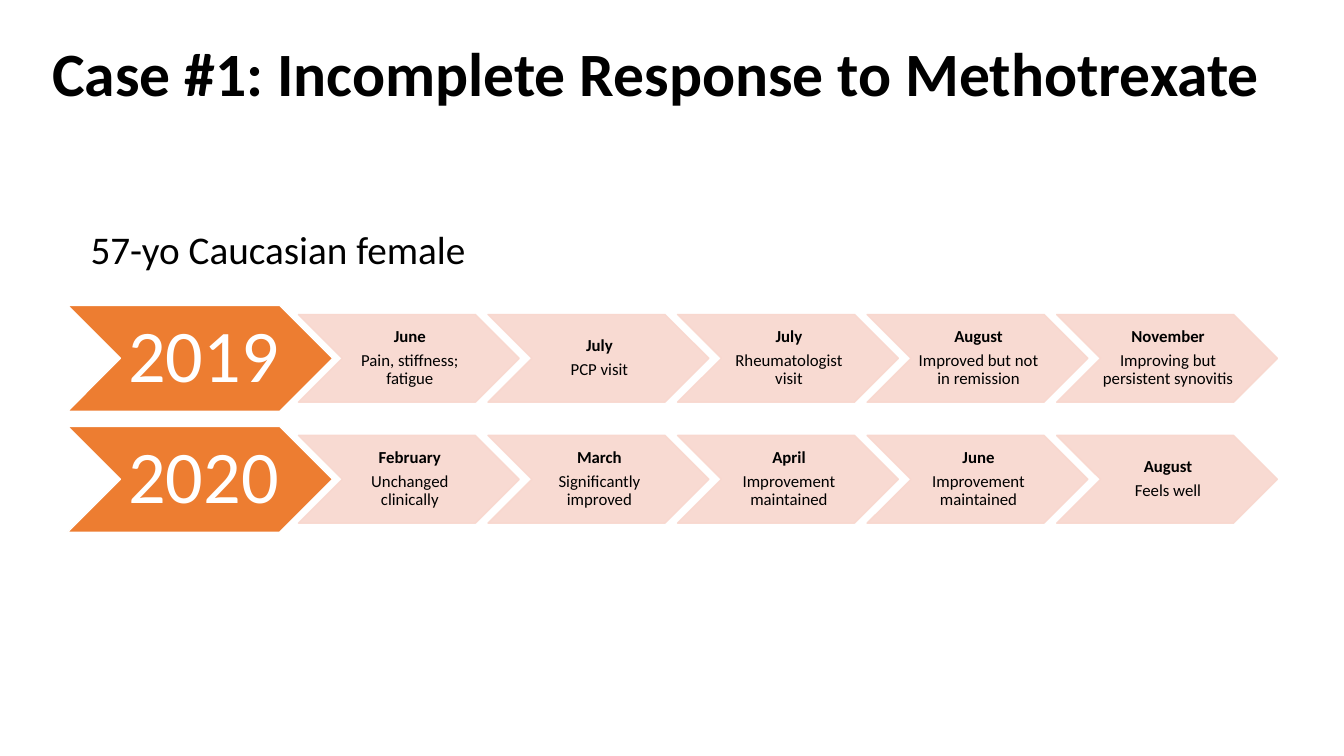
from dataclasses import dataclass

from pptx import Presentation
from pptx import util as u
from pptx.dml.color import RGBColor
from pptx.enum import shapes, text
from pptx.oxml.ns import qn
from lxml import etree

BLACK = RGBColor(0x00, 0x00, 0x00)
WHITE = RGBColor(0xFF, 0xFF, 0xFF)
ORANGE = RGBColor(0xED, 0x7D, 0x31)
BLUSH = RGBColor(0xF8, 0xD7, 0xCE)
FONT = "Calibri"

LEFT, TOP = 2.96, 3.03
COL, ROW = 1.88, 1.2


@dataclass(frozen=True)
class Visit:
    month: str
    finding: str


@dataclass(frozen=True)
class Year:
    label: str
    visits: tuple[Visit, ...]


@dataclass(frozen=True)
class Style:
    width: float
    height: float
    fill: RGBColor
    line: RGBColor
    color: RGBColor
    size: int
    insets: tuple[float, float, float, float]
    opacity: int = 100


YEAR = Style(2.63, 1.05, ORANGE, WHITE, WHITE, 53, (0.07, 0.04, 0, 0.04))
VISIT = Style(2.19, 0.87, BLUSH, BLUSH, BLACK, 12, (0.02, 0.01, 0, 0.01), 90)

TIMELINE = (
    Year("2019", (
        Visit("June", "Pain, stiffness; fatigue"),
        Visit("July", "PCP visit"),
        Visit("July", "Rheumatologist visit"),
        Visit("August", "Improved but not in remission"),
        Visit("November", "Improving but persistent synovitis"),
    )),
    Year("2020", (
        Visit("February", "Unchanged clinically"),
        Visit("March", "Significantly improved"),
        Visit("April", "Improvement maintained"),
        Visit("June", "Improvement maintained"),
        Visit("August", "Feels well"),
    )),
)


def set_font(p, size: int, color: RGBColor, bold: bool = False) -> None:
    p.font.name = FONT
    p.font.size = u.Pt(size)
    p.font.bold = bold
    p.font.color.rgb = color


def set_opacity(sp, percent: int) -> None:
    for clr in sp._element.spPr.iter(qn("a:srgbClr")):
        etree.SubElement(clr, qn("a:alpha")).set("val", str(percent * 1000))


def add_label(s, box: tuple[float, float, float, float], words: str,
              size: int, bold: bool = False, wrap: bool = True):
    tf = s.shapes.add_textbox(*map(u.Inches, box)).text_frame
    tf.word_wrap = wrap
    p = tf.paragraphs[0]
    p.text = words
    set_font(p, size, BLACK, bold)
    return tf


def add_chevron(s, left: float, middle: float, style: Style,
                lines: tuple[tuple[str, bool], ...]) -> None:
    sp = s.shapes.add_shape(
        shapes.MSO_SHAPE.CHEVRON, u.Inches(left), u.Inches(middle - style.height / 2),
        u.Inches(style.width), u.Inches(style.height))
    sp.shadow.inherit = False
    sp.fill.solid()
    sp.fill.fore_color.rgb = style.fill
    sp.line.color.rgb = style.line
    sp.line.width = u.Pt(1)
    if style.opacity < 100:
        set_opacity(sp, style.opacity)
    tf = sp.text_frame
    tf.word_wrap = True
    tf.vertical_anchor = text.MSO_ANCHOR.MIDDLE
    tf.margin_left, tf.margin_top, tf.margin_right, tf.margin_bottom = map(
        u.Inches, style.insets)
    for i, (words, bold) in enumerate(lines):
        p = tf.add_paragraph() if i else tf.paragraphs[0]
        p.text = words
        p.alignment = text.PP_ALIGN.CENTER
        p.line_spacing = 0.9
        p.space_after = u.Pt(round(style.size * 0.35, 1))
        set_font(p, style.size, style.color, bold)


def main() -> None:
    prs = Presentation()
    prs.slide_width, prs.slide_height = u.Inches(13.33), u.Inches(7.5)
    s = prs.slides.add_slide(prs.slide_layouts[6])

    tf = add_label(s, (0.42, 0.03, 12.5, 1.45),
                   "Case #1: Incomplete Response to Methotrexate", 44, bold=True)
    tf.vertical_anchor = text.MSO_ANCHOR.MIDDLE
    tf.paragraphs[0].line_spacing = 0.9

    for row, year in enumerate(TIMELINE):
        middle = TOP + row * ROW + YEAR.height / 2
        add_chevron(s, 0.67, middle, YEAR, ((year.label, False),))
        for col, visit in enumerate(year.visits):
            add_chevron(s, LEFT + col * COL, middle, VISIT,
                        ((visit.month, True), (visit.finding, False)))

    tf = add_label(s, (0.8, 2.19, 4.45, 0.57), "57-yo Caucasian female", 28, wrap=False)
    tf.auto_size = text.MSO_AUTO_SIZE.SHAPE_TO_FIT_TEXT

    prs.save("out.pptx")


if __name__ == "__main__":
    main()
